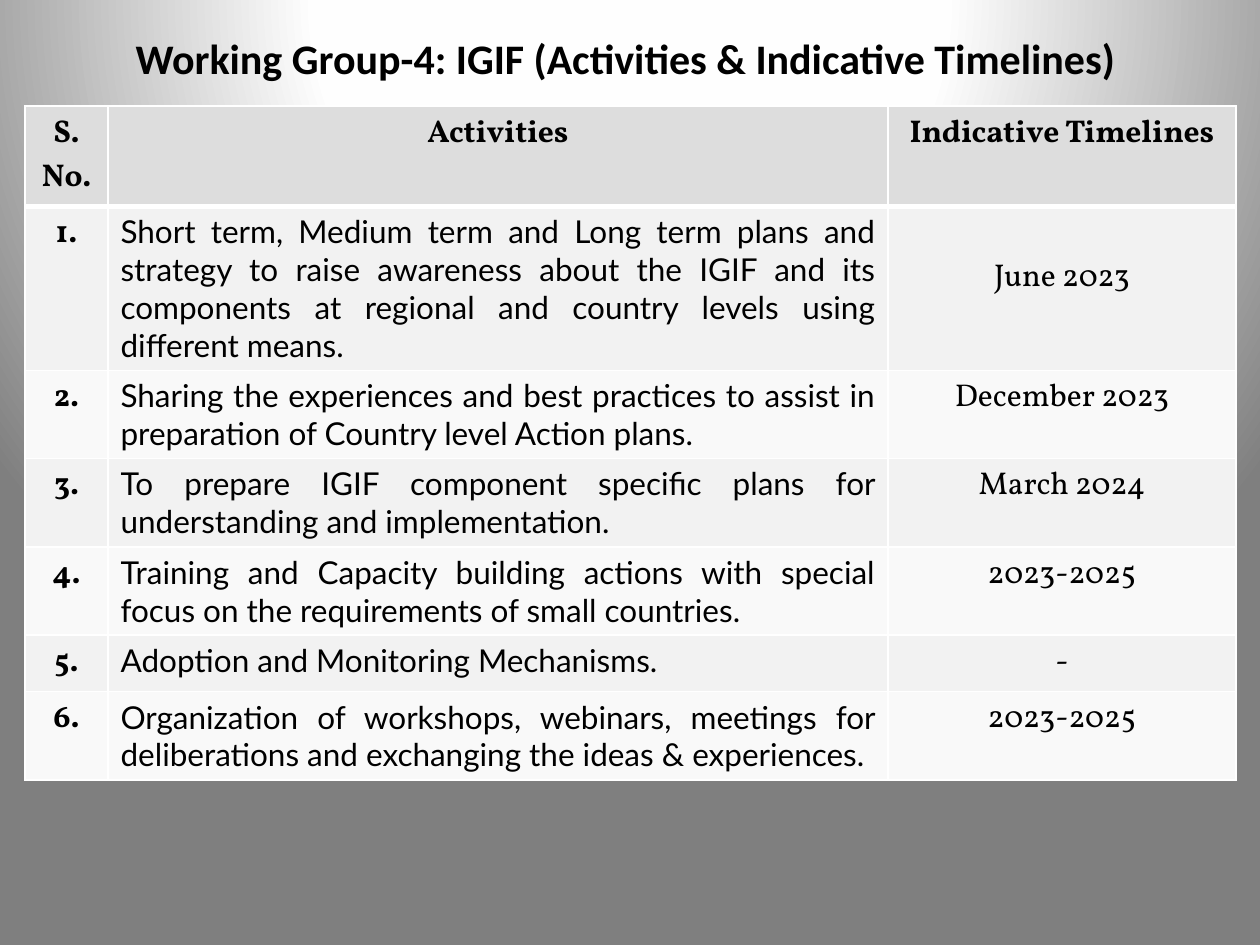
import pptx
import pptx.dml.color
import pptx.enum.text
import pptx.oxml
import pptx.oxml.ns
import pptx.util

SCALE = 914400 / 126
ALIGN = pptx.enum.text.PP_ALIGN
NAMESPACES = pptx.oxml.ns.nsdecls("a", "p")


def color(value):
    return pptx.dml.color.RGBColor.from_string(value)


def write(frame, text, font="Vollkorn", size=18, bold=False, align=ALIGN.CENTER, hanging=0):
    frame.word_wrap = True
    for number, line in enumerate(text.split("\n")):
        para = frame.add_paragraph() if number else frame.paragraphs[0]
        para.alignment = align
        if hanging:
            properties = para._p.get_or_add_pPr()
            properties.set("marL", str(round(hanging * SCALE)))
            properties.set("indent", str(round(-hanging * SCALE)))
        span = para.add_run()
        span.text = line
        span.font.name = font
        span.font.size = pptx.util.Pt(size)
        span.font.bold = bold
        span.font.color.rgb = color("000000")


deck = pptx.Presentation()
deck.slide_width = round(1260 * SCALE)
deck.slide_height = round(945 * SCALE)
page = deck.slides.add_slide(deck.slide_layouts[6])

stops = "".join(
    f'<a:gs pos="{percent * 1000}"><a:srgbClr val="{shade}"/></a:gs>'
    for percent, shade in [(0, "FFFFFF"), (40, "FEFEFE"), (100, "7F7F7F")]
)
page._element.cSld.insert(0, pptx.oxml.parse_xml(
    f'<p:bg {NAMESPACES}><p:bgPr><a:gradFill rotWithShape="1"><a:gsLst>{stops}</a:gsLst>'
    '<a:path path="circle"><a:fillToRect l="50000" t="-80000" r="50000" b="180000"/></a:path>'
    '</a:gradFill><a:effectLst/></p:bgPr></p:bg>'
))

activities = [
    ("Short term, Medium term and Long term plans and strategy to raise awareness about the IGIF "
     "and its components at regional and country levels using different means.", "June 2023"),
    ("Sharing the experiences and best practices to assist in preparation of Country level "
     "Action plans.", "December 2023"),
    ("To prepare IGIF component specific plans for understanding and implementation.", "March 2024"),
    ("Training and Capacity building actions with special focus on the requirements of small "
     "countries.", "2023-2025"),
    ("Adoption and Monitoring Mechanisms.", "-"),
    ("Organization of workshops, webinars, meetings for deliberations and exchanging the ideas "
     "& experiences.", "2023-2025"),
]
rows = [("S.\nNo.", "Activities", "Indicative Timelines")]
rows += [(f"{number}.", *activity) for number, activity in enumerate(activities, 1)]
widths = [83, 780, 348]

table = page.shapes.add_table(
    len(rows), len(widths), round(25 * SCALE), round(106 * SCALE),
    round(sum(widths) * SCALE), round(52 * len(rows) * SCALE),
).table
for column, width in zip(table.columns, widths):
    column.width = round(width * SCALE)

for row, texts in enumerate(rows):
    fill = "DDDDDD" if row == 0 else "F2F2F2" if row % 2 else "F9F9F9"
    for column, text in enumerate(texts):
        cell = table.cell(row, column)
        for side in ["L", "R", "T", "B"]:
            thick = (row == 0 and side == "B") or (row == 1 and side == "T")
            cell._tc.get_or_add_tcPr().append(pptx.oxml.parse_xml(
                f'<a:ln{side} {NAMESPACES} w="{38100 if thick else 12700}"><a:solidFill>'
                f'<a:srgbClr val="FFFFFF"/></a:solidFill></a:ln{side}>'
            ))
        cell.fill.solid()
        cell.fill.fore_color.rgb = color(fill)
        if row and column == 1:
            write(cell.text_frame, text, font="Lato", align=ALIGN.JUSTIFY,
                  hanging=48 if row == 5 else 0)
        else:
            write(cell.text_frame, text, bold=row == 0 or column == 0)
table.cell(1, 2).margin_top = round(50 * SCALE)

title = page.shapes.add_textbox(*[round(length * SCALE) for length in (35, 26, 1181, 116)])
write(title.text_frame, "Working Group-4: IGIF (Activities & Indicative Timelines)",
      font="Calibri", size=24, bold=True)

deck.save("out.pptx")
